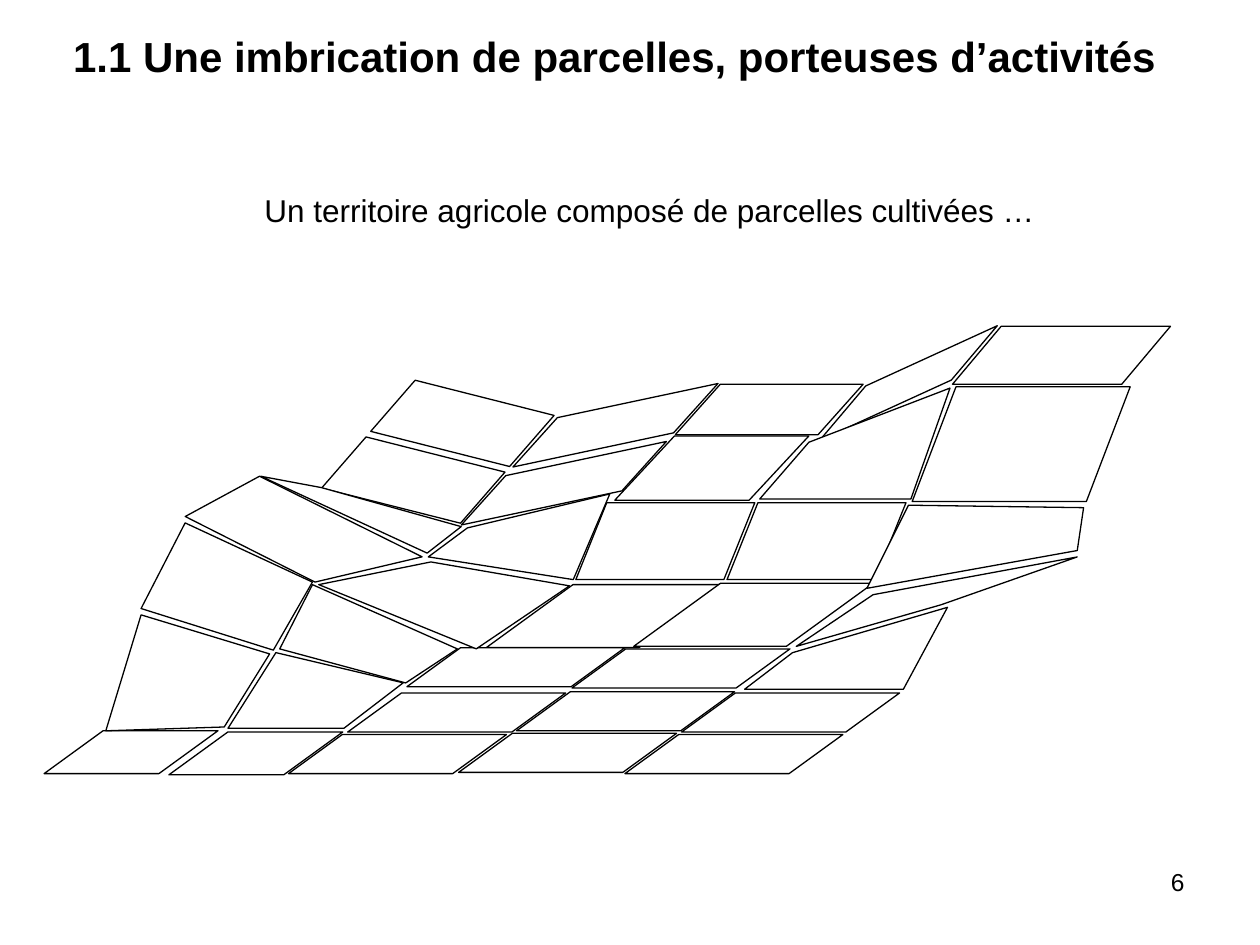
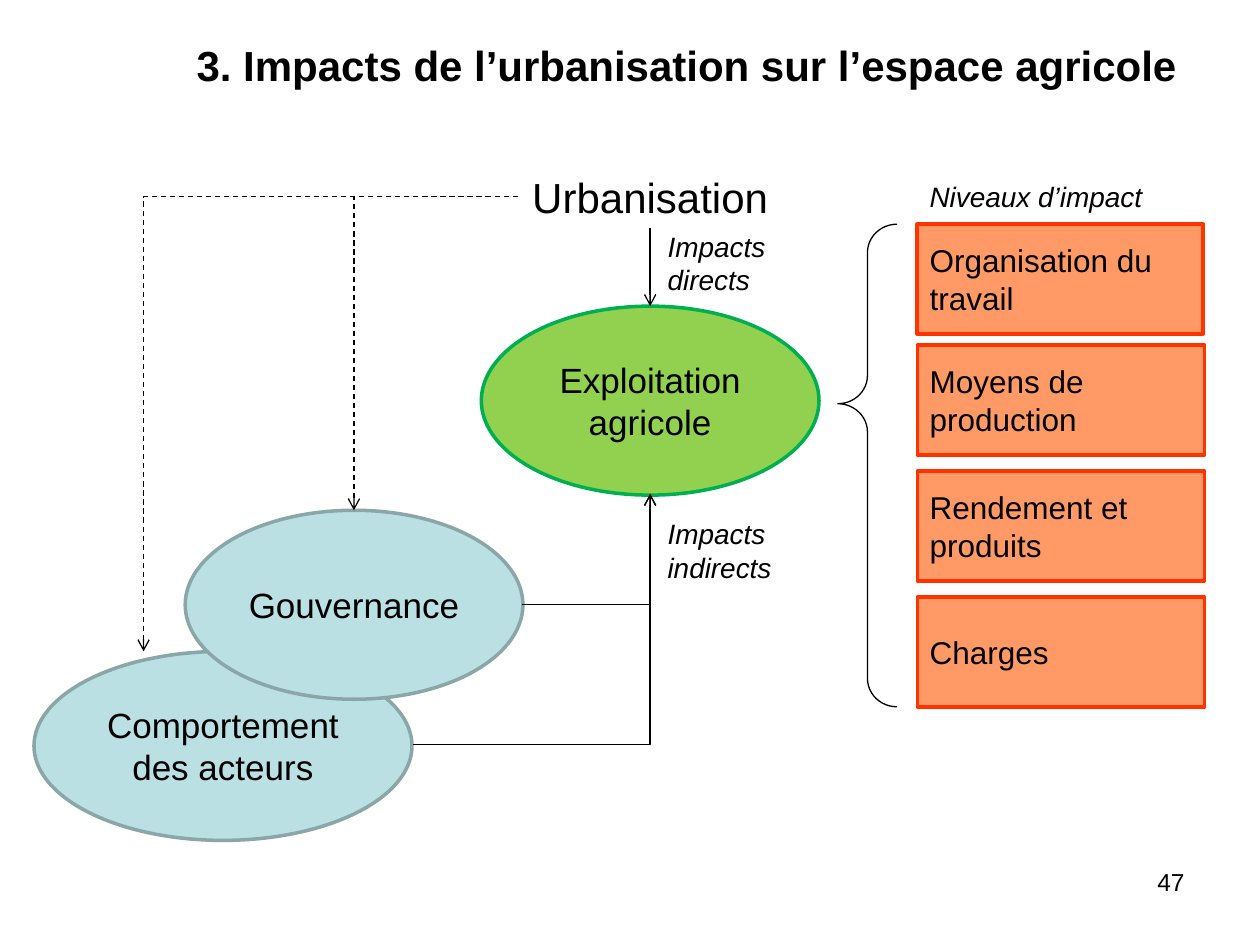
from lxml import etree
from pptx import Presentation
from pptx.dml.color import RGBColor
from pptx.enum import dml, shapes, text
from pptx.oxml.ns import qn
from pptx.util import Pt

PX = 9144
FONT = "Arial"
BLACK = RGBColor(0x00, 0x00, 0x00)
WHITE = RGBColor(0xFF, 0xFF, 0xFF)
GREEN = RGBColor(0x92, 0xD0, 0x50)
DARK_GREEN = RGBColor(0x00, 0xB0, 0x50)
ORANGE = RGBColor(0xFF, 0x99, 0x66)
RED = RGBColor(0xFF, 0x33, 0x00)
PALE_BLUE = RGBColor(0xBB, 0xE0, 0xE3)
GREY_BLUE = RGBColor(0x8A, 0xA6, 0xA8)
LEFT, CENTER, RIGHT = text.PP_ALIGN.LEFT, text.PP_ALIGN.CENTER, text.PP_ALIGN.RIGHT
SHAPE = shapes.MSO_SHAPE

# width, height, slant, rotation, positions
REGULAR_PLOTS = [
    (154, 51, 0.929, 0, [(488, 346)]),
    (149, 40, 0.892, 0, [(536, 305)]),
    (166, 24, 2.13, 155.4, [(638, 292)]),
    (173, 46, 0.84, 0, [(756, 259)]),
    (173, 91, 0.382, 0, [(724, 307)]),
    (142, 61, 0.402, 0, [(457, 399), (577, 399)]),
    (138, 48, 0.506, 14.2, [(298, 312), (259, 357)]),
    (173, 31, 1.377, -12, [(402, 322), (361, 368)]),
    (190, 50, 1.377, 0, [(386, 464), (503, 463)]),
    (173, 31, 1.377, 0, [(323, 514), (454, 515), (276, 550), (410, 549), (541, 550),
                         (229, 583), (364, 582), (496, 583)]),
    (138, 34, 1.377, 0, [(134, 581), (35, 580)]),
]
IRREGULAR_PLOTS = [
    [(642, 351), (603, 396), (723, 396), (754, 308)],
    [(721, 401), (688, 467), (855, 437), (860, 403)],
    [(255, 387), (207, 378), (339, 439), (366, 418)],
    [(484, 392), (455, 460), (340, 442), (371, 419)],
    [(84, 580), (112, 488), (214, 519), (178, 577)],
    [(320, 542), (219, 518), (181, 578), (273, 578)],
    [(112, 483), (147, 415), (248, 462), (217, 516)],
    [(147, 410), (206, 378), (335, 442), (250, 462)],
    [(253, 464), (342, 446), (452, 465), (378, 515)],
    [(248, 464), (222, 515), (322, 542), (363, 515)],
    [(632, 513), (693, 472), (855, 442), (747, 480)],
    [(591, 547), (717, 547), (752, 482), (629, 518)],
]
IMPACT_LEVELS = [
    (178, 227, "Organisation du travail"),
    (274, 228, "Moyens de production"),
    (374, 228, "Rendement et produits"),
    (474, 228, "Charges"),
]


def emu(*lengths):
    return [length * PX for length in lengths]


def write(sp, words, size, align=LEFT, anchor=text.MSO_ANCHOR.TOP, bold=False, italic=False):
    tf = sp.text_frame
    tf.word_wrap = True
    tf.vertical_anchor = anchor
    p = tf.paragraphs[0]
    p.text = words
    p.alignment = align
    p.font.name, p.font.size = FONT, Pt(size)
    p.font.bold, p.font.italic = bold, italic
    p.font.color.rgb = BLACK


def paint(sp, fill, line, width):
    sp.shadow.inherit = False
    if fill is None:
        sp.fill.background()
    else:
        sp.fill.solid()
        sp.fill.fore_color.rgb = fill
    sp.line.color.rgb = line
    sp.line.width = Pt(width)


def add_label(slide, box, words, size, **style):
    sp = slide.shapes.add_textbox(*emu(*box))
    write(sp, words, size, **style)
    return sp


def add_node(slide, kind, box, words, size, fill, line, align=CENTER):
    sp = slide.shapes.add_shape(kind, *emu(*box))
    paint(sp, fill, line, 2)
    write(sp, words, size, align, text.MSO_ANCHOR.MIDDLE)
    return sp


def add_arrow(slide, start, end, bent=True, dashed=False, glue_start=None, glue_end=None):
    cxn = slide.shapes.add_connector(shapes.MSO_CONNECTOR.STRAIGHT, *emu(*start, *end))
    cxn.line.color.rgb = BLACK
    cxn.line.width = Pt(0.75)
    if dashed:
        cxn.line.dash_style = dml.MSO_LINE.DASH
    sp_pr = cxn._element.spPr
    if bent:
        sp_pr.find(qn("a:prstGeom")).set("prst", "bentConnector2")
    etree.SubElement(sp_pr.find(qn("a:ln")), qn("a:tailEnd"), type="arrow")
    etree.SubElement(sp_pr, qn("a:effectLst"))
    links = cxn._element.nvCxnSpPr.cNvCxnSpPr
    for tag, glue in (("a:stCxn", glue_start), ("a:endCxn", glue_end)):
        if glue:
            sp, site = glue
            etree.SubElement(links, qn(tag), id=str(sp.shape_id), idx=str(site))


def add_slide(prs, title, title_box, number):
    slide = prs.slides.add_slide(prs.slide_layouts[5])
    sp = slide.shapes.title
    sp.left, sp.top, sp.width, sp.height = emu(*title_box)
    write(sp, title, 24, bold=True)
    sp.text_frame.auto_size = text.MSO_AUTO_SIZE.NONE
    add_label(slide, (717, 683, 233, 52), number, 14, align=RIGHT)
    return slide


def add_plots(slide):
    plots = slide.shapes.add_group_shape().shapes
    for width, height, slant, rotation, positions in REGULAR_PLOTS:
        for x, y in positions:
            sp = plots.add_shape(SHAPE.PARALLELOGRAM, *emu(x, y, width, height))
            sp.adjustments[0] = slant
            sp.rotation = rotation
            paint(sp, WHITE, BLACK, 0.75)
    for corners in IRREGULAR_PLOTS:
        outline = plots.build_freeform(*corners[0], scale=PX)
        outline.add_line_segments(corners[1:], close=True)
        paint(outline.convert_to_shape(), WHITE, BLACK, 0.75)


def add_territory_slide(prs):
    slide = add_slide(prs, "1.1 Une imbrication de parcelles, porteuses d’activités",
                      (48, 19, 924, 50), "6")
    add_label(slide, (200, 147, 646, 40),
              "Un territoire agricole composé de parcelles cultivées …", 18)
    add_plots(slide)


def add_impacts_slide(prs):
    slide = add_slide(prs, "3. Impacts de l’urbanisation sur l’espace agricole",
                      (146, 26, 811, 50), "47")
    farm = add_node(slide, SHAPE.OVAL, (382, 243, 268, 150), "Exploitation agricole", 20,
                    GREEN, DARK_GREEN)
    actors = add_node(slide, SHAPE.OVAL, (27, 517, 300, 150), "Comportement des acteurs", 20,
                      PALE_BLUE, GREY_BLUE)
    governance = add_node(slide, SHAPE.OVAL, (147, 405, 268, 150), "Gouvernance", 20,
                          PALE_BLUE, GREY_BLUE)
    for top, width, words in IMPACT_LEVELS:
        add_node(slide, SHAPE.RECTANGLE, (728, top, width, 87), words, 18, ORANGE, RED, LEFT)

    city = add_label(slide, (411, 131, 210, 50), "Urbanisation", 24, align=CENTER)
    for box, words in (((520, 177, 163, 64), "Impacts directs"),
                       ((520, 405, 163, 64), "Impacts indirects"),
                       ((728, 138, 240, 37), "Niveaux d’impact")):
        add_label(slide, box, words, 16, italic=True)

    add_arrow(slide, (516, 181), (516, 243), bent=False)
    add_arrow(slide, (411, 156), (281, 405), dashed=True,
              glue_start=(city, 1), glue_end=(governance, 0))
    add_arrow(slide, (411, 156), (114, 517), dashed=True, glue_start=(city, 1))
    add_arrow(slide, (328, 591), (516, 392), glue_start=(actors, 6), glue_end=(farm, 4))
    add_arrow(slide, (414, 480), (516, 392), glue_start=(governance, 6), glue_end=(farm, 4))

    brace = slide.shapes.add_shape(SHAPE.LEFT_BRACE, *emu(665, 178, 47, 383))
    brace.adjustments[0], brace.adjustments[1] = 0.477, 0.372
    paint(brace, None, BLACK, 0.75)


def main():
    prs = Presentation()
    prs.slide_width, prs.slide_height = emu(1000, 750)
    add_territory_slide(prs)
    add_impacts_slide(prs)
    prs.save("out.pptx")


if __name__ == "__main__":
    main()
